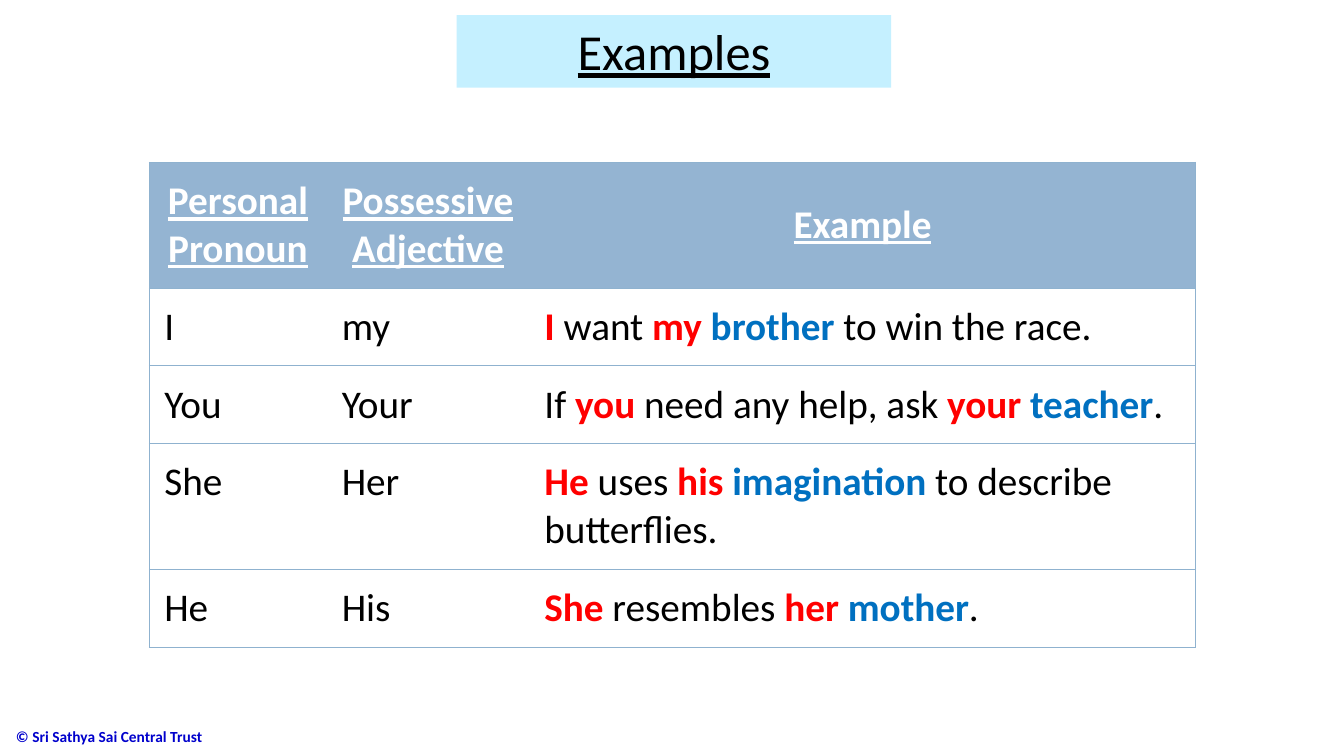
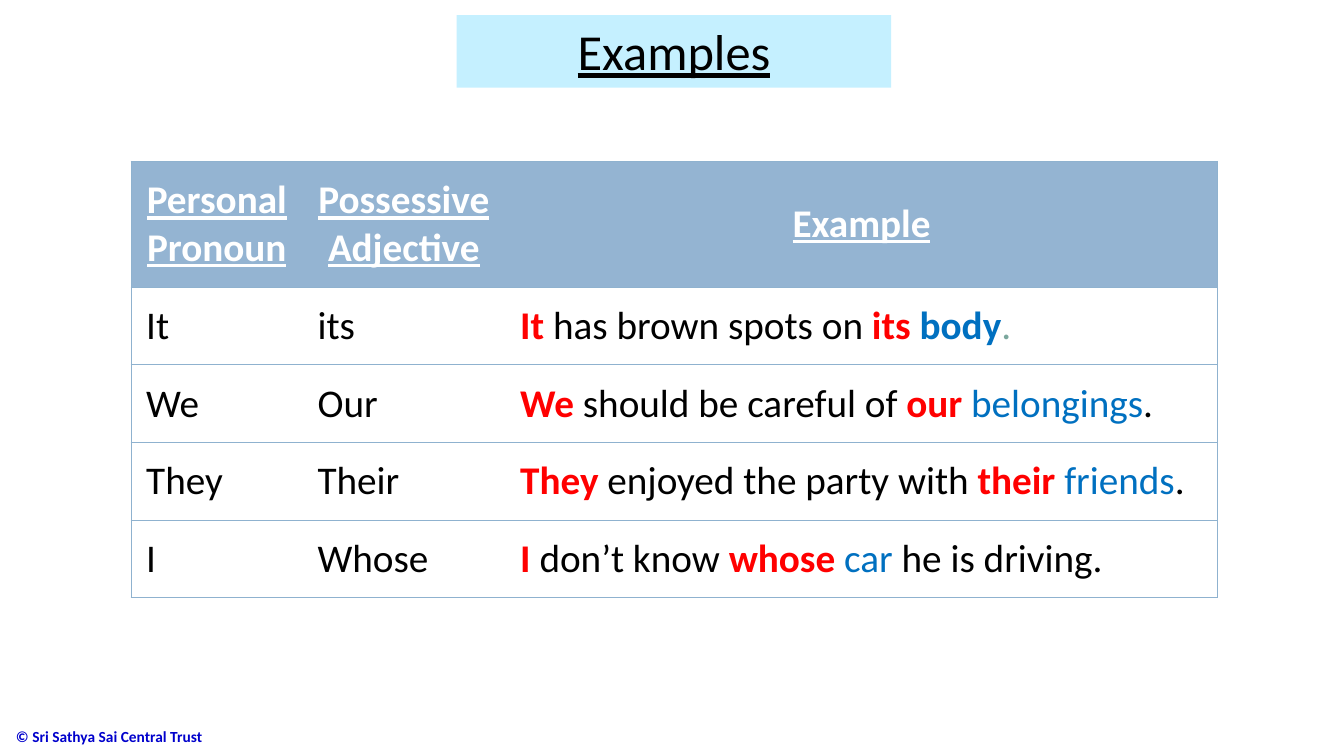
import pptx
import pptx.util
import pptx.dml.color
import pptx.enum.text
import pptx.oxml
import pptx.oxml.ns
from lxml import etree

Inches, Pt = pptx.util.Inches, pptx.util.Pt
PP_ALIGN, MSO_ANCHOR = pptx.enum.text.PP_ALIGN, pptx.enum.text.MSO_ANCHOR

# Shared look
FONT = "Calibri"
COLORS = {
    "title_band": "C5F0FF", "header": "94B4D2", "border": "8FB2CF",
    "white": "FFFFFF", "black": "000000", "red": "FF0000",
    "blue": "0070C0", "green": "7BA79D", "footer": "0000CC",
}
STYLES = {  # colour, bold
    "plain": ("black", False),
    "pronoun": ("red", True),
    "noun": ("blue", True),
    "light_noun": ("blue", False),
    "stop": ("green", False),
}
TITLE = "Examples"
FOOTER = "© Sri Sathya Sai Central Trust"
HEADINGS = ["Personal Pronoun", "Possessive Adjective", "Example"]
ONE_LINE, TWO_LINES = 0.77, 1.25  # row heights

# Content: pronoun, adjective, example as (text, style) runs
SLIDES = [
    {
        "at": (1.48, 1.61),
        "cols": [1.76, 2.01, 6.61],
        "two_line_rows": [0, 3],
        "rows": [
            ("I", "my", [("I ", "pronoun"), ("want ", "plain"), ("my ", "pronoun"),
                         ("brother", "noun"), (" to win the race.", "plain")]),
            ("You", "Your", [("If ", "plain"), ("you", "pronoun"),
                             (" need any help, ask ", "plain"), ("your ", "pronoun"),
                             ("teacher", "noun"), (".", "plain")]),
            ("She", "Her", [("He", "pronoun"), (" uses ", "plain"), ("his ", "pronoun"),
                            ("imagination", "noun"),
                            (" to describe butterflies.", "plain")]),
            ("He", "His", [("She ", "pronoun"), ("resembles ", "plain"),
                           ("her ", "pronoun"), ("mother", "noun"), (".", "plain")]),
        ],
    },
    {
        "at": (1.3, 1.6),
        "cols": [1.7, 2.01, 7.07],
        "two_line_rows": [0],
        "rows": [
            ("It", "its", [("It", "pronoun"), (" has brown spots on ", "plain"),
                           ("its ", "pronoun"), ("body", "noun"), (".", "stop")]),
            ("We", "Our", [("We", "pronoun"), (" should be careful of ", "plain"),
                           ("our ", "pronoun"), ("belongings", "light_noun"),
                           (".", "plain")]),
            ("They", "Their", [("They", "pronoun"), (" enjoyed the party with ", "plain"),
                               ("their ", "pronoun"), ("friends", "light_noun"),
                               (".", "plain")]),
            ("I", "Whose", [("I ", "pronoun"), ("don’t know ", "plain"),
                            ("whose ", "pronoun"), ("car", "light_noun"),
                            (" he is driving.", "plain")]),
        ],
    },
]


def rgb(name):
    return pptx.dml.color.RGBColor.from_string(COLORS[name])


def set_font(font, size, color, bold=False, underline=False):
    font.name, font.size = FONT, Pt(size)
    font.bold, font.underline = bold, underline
    font.color.rgb = rgb(color)


def set_borders(cell, sides):
    """Draw the listed sides (of L, R, T, B) and clear the others."""
    tc_pr = cell._tc.get_or_add_tcPr()
    qn = pptx.oxml.ns.qn
    for side in "LRTB":
        ln = etree.SubElement(tc_pr, qn("a:ln" + side), w=str(Pt(0.75)))
        if side in sides:
            fill = etree.SubElement(ln, qn("a:solidFill"))
            etree.SubElement(fill, qn("a:srgbClr"), val=COLORS["border"])
        else:
            etree.SubElement(ln, qn("a:noFill"))


def add_title(s):
    sp = s.shapes.title
    sp.left, sp.top = Inches(4.53), Inches(0.15)
    sp.width, sp.height = Inches(4.31), Inches(0.72)
    sp.fill.solid()
    sp.fill.fore_color.rgb = rgb("title_band")
    tf = sp.text_frame
    tf.auto_size = pptx.enum.text.MSO_AUTO_SIZE.NONE
    tf.vertical_anchor = MSO_ANCHOR.TOP
    tf.text = TITLE
    p = tf.paragraphs[0]
    p.alignment = PP_ALIGN.CENTER
    set_font(p.font, 36, "black", underline=True)


def add_footer(s):
    sp = s.shapes.add_textbox(Inches(0.06), Inches(7.1), Inches(3.53), Inches(0.41))
    tf = sp.text_frame
    tf.word_wrap = True
    tf.vertical_anchor = MSO_ANCHOR.MIDDLE
    tf.text = FOOTER
    set_font(tf.paragraphs[0].font, 11, "footer", bold=True)


def add_examples(s, data):
    rows = [HEADINGS] + data["rows"]
    cols = data["cols"]
    heights = [TWO_LINES if i in data["two_line_rows"] else ONE_LINE
               for i in range(len(rows))]
    left, top = data["at"]
    table = s.shapes.add_table(len(rows), len(cols), Inches(left), Inches(top),
                               Inches(sum(cols)), Inches(sum(heights))).table
    table.horz_banding = False
    for column, width in zip(table.columns, cols):
        column.width = Inches(width)
    for i, (row, height) in enumerate(zip(rows, heights)):
        table.rows[i].height = Inches(height)
        for j, content in enumerate(row):
            cell = table.cell(i, j)
            cell.margin_left = cell.margin_right = Inches(0.15)
            cell.margin_top = cell.margin_bottom = Inches(0.15)
            outer = {0: "L", len(cols) - 1: "R"}.get(j, "")
            set_borders(cell, "TB" + outer)
            p = cell.text_frame.paragraphs[0]
            if i == 0:
                cell.fill.solid()
                cell.fill.fore_color.rgb = rgb("header")
                cell.vertical_anchor = MSO_ANCHOR.MIDDLE
                p.alignment = PP_ALIGN.CENTER
            else:
                cell.fill.background()
            runs = [(content, "plain")] if isinstance(content, str) else content
            for text, style in runs:
                r = p.add_run()
                r.text = text
                if i == 0:
                    set_font(r.font, 28, "white", bold=True, underline=True)
                else:
                    set_font(r.font, 28, *STYLES[style])


def main():
    prs = pptx.Presentation()
    prs.slide_width, prs.slide_height = Inches(13.33), Inches(7.5)
    for data in SLIDES:
        s = prs.slides.add_slide(prs.slide_layouts[5])
        add_footer(s)
        add_examples(s, data)
        add_title(s)
    prs.save("out.pptx")


if __name__ == "__main__":
    main()
